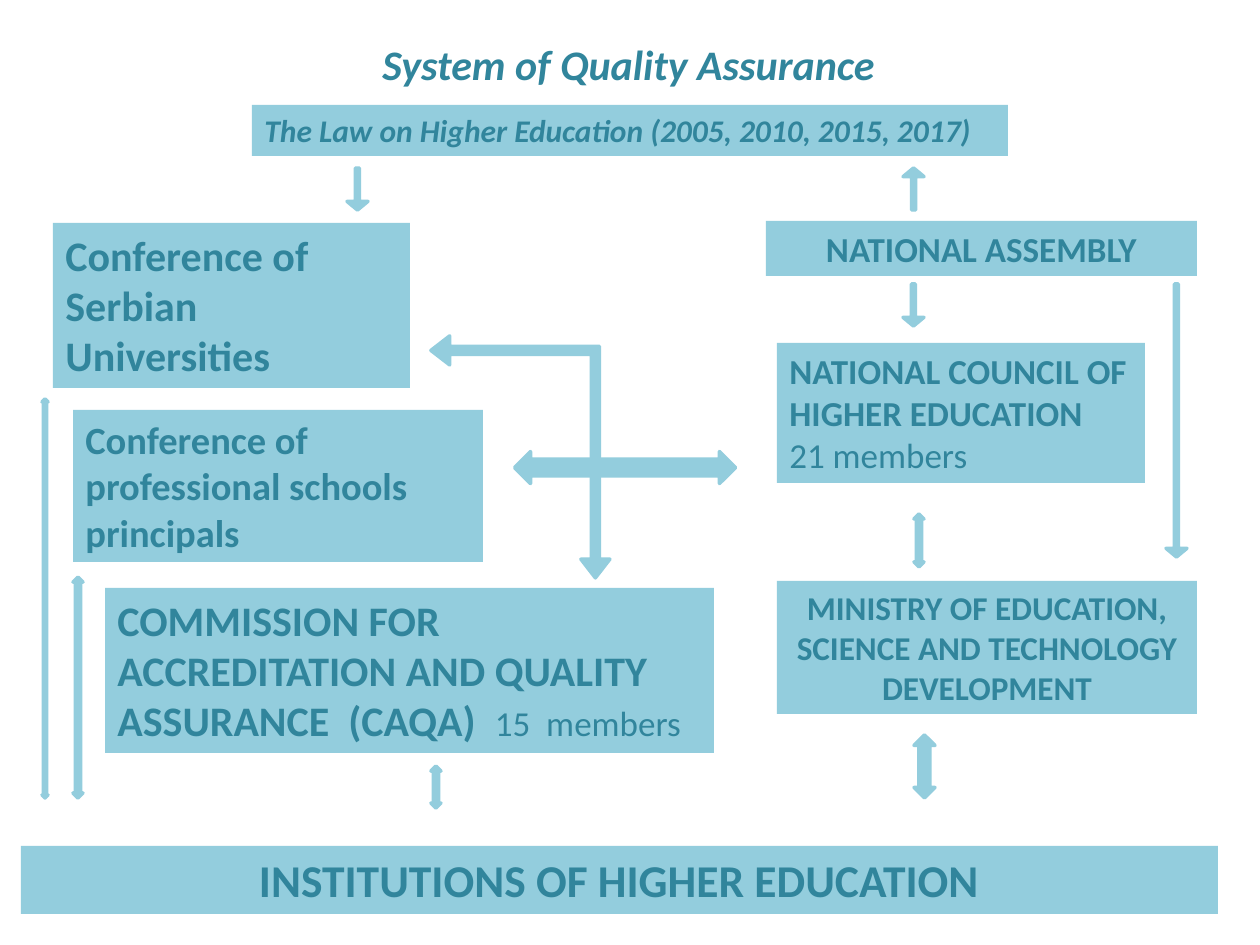
import dataclasses
import typing

import pptx
import pptx.dml.color
import pptx.enum.shapes
import pptx.enum.text
import pptx.util

SCALE = 914400 / 126
FILL = "93CDDD"
INK = "31859C"
KIND = pptx.enum.shapes.MSO_SHAPE
ALIGN = pptx.enum.text.PP_ALIGN
DOWN = (0.187, 0.412)
BOTH = (0.275, 0.525)
BENT = (0.045, 0.081, 0.105)


class Run(typing.NamedTuple):
    text: str
    size: int
    bold: bool = True
    slant: bool = False


@dataclasses.dataclass
class Box:
    left: int
    top: int
    width: int
    height: int
    paras: list[list[Run]]
    center: bool = False


@dataclasses.dataclass
class Arrow:
    left: int
    top: int
    width: int
    height: int
    kind: typing.Any
    shape: tuple[float, ...]
    turn: int = 0
    flip: bool = False


def px(count: int) -> int:
    return round(count * SCALE)


def place(item: Box | Arrow) -> tuple[int, ...]:
    return tuple(px(n) for n in (item.left, item.top, item.width, item.height))


def color(code: str) -> pptx.dml.color.RGBColor:
    return pptx.dml.color.RGBColor.from_string(code)


def paint(shape: typing.Any) -> None:
    shape.shadow.inherit = False
    shape.fill.solid()
    shape.fill.fore_color.rgb = color(FILL)


def write(frame: typing.Any, paras: list[list[Run]], center: bool) -> None:
    frame.vertical_anchor = pptx.enum.text.MSO_ANCHOR.TOP
    frame.auto_size = pptx.enum.text.MSO_AUTO_SIZE.SHAPE_TO_FIT_TEXT
    for index, runs in enumerate(paras):
        para = frame.add_paragraph() if index else frame.paragraphs[0]
        para.alignment = ALIGN.CENTER if center else ALIGN.LEFT
        for part in runs:
            run = para.add_run()
            run.text = part.text
            font = run.font
            font.name = "Calibri"
            font.size = pptx.util.Pt(part.size)
            font.bold = part.bold
            font.italic = part.slant
            font.color.rgb = color(INK)


def draw_box(slide: typing.Any, box: Box) -> None:
    shape = slide.shapes.add_shape(KIND.RECTANGLE, *place(box))
    paint(shape)
    shape.line.fill.background()
    shape.text_frame.word_wrap = True
    write(shape.text_frame, box.paras, box.center)


def draw_title(slide: typing.Any, box: Box) -> None:
    frame = slide.shapes.add_textbox(*place(box)).text_frame
    frame.word_wrap = False
    write(frame, box.paras, box.center)


def draw_arrow(slide: typing.Any, arrow: Arrow) -> None:
    shape = slide.shapes.add_shape(arrow.kind, *place(arrow))
    paint(shape)
    shape.line.color.rgb = color(FILL)
    shape.line.width = pptx.util.Pt(2)
    for index, value in enumerate(arrow.shape):
        shape.adjustments[index] = value
    shape.rotation = arrow.turn
    if arrow.flip:
        shape.element.spPr.xfrm.set("flipV", "1")


TITLE = Box(370, 32, 522, 63, [[Run("System of Quality Assurance", 24, slant=True)]])

BOXES = [
    Box(252, 105, 756, 51,
        [[Run("The Law on Higher Education (2005, 2010, 2015, 2017)", 18, slant=True)]]),
    Box(766, 221, 431, 55, [[Run("NATIONAL ASSEMBLY", 20)]], True),
    Box(777, 343, 368, 140,
        [[Run("NATIONAL COUNCIL OF HIGHER EDUCATION", 20)],
         [Run("21 members", 20, False)]]),
    Box(777, 581, 420, 133,
        [[Run("MINISTRY OF EDUCATION, SCIENCE AND TECHNOLOGY DEVELOPMENT", 19)]], True),
    Box(53, 223, 357, 165, [[Run("Conference of Serbian Universities", 24)]]),
    Box(21, 846, 1197, 68, [[Run("INSTITUTIONS OF HIGHER EDUCATION", 26)]], True),
    Box(73, 410, 410, 152, [[Run("Conference of professional schools principals", 22)]]),
    Box(105, 588, 609, 165,
        [[Run("COMMISSION FOR ACCREDITATION AND QUALITY ASSURANCE  (CAQA)  ", 24),
          Run("15  members", 20, False)]]),
]

ARROWS = [
    Arrow(347, 168, 21, 42, KIND.DOWN_ARROW, DOWN),
    Arrow(903, 168, 21, 42, KIND.DOWN_ARROW, DOWN, 180),
    Arrow(903, 284, 21, 42, KIND.DOWN_ARROW, DOWN),
    Arrow(1166, 284, 21, 273, KIND.DOWN_ARROW, DOWN),
    Arrow(914, 514, 10, 53, KIND.UP_DOWN_ARROW, BOTH),
    Arrow(914, 735, 21, 63, KIND.UP_DOWN_ARROW, BOTH),
    Arrow(431, 766, 10, 42, KIND.UP_DOWN_ARROW, BOTH),
    Arrow(431, 336, 179, 242, KIND.LEFT_UP_ARROW, BENT, flip=True),
    Arrow(42, 399, 6, 399, KIND.UP_DOWN_ARROW, BOTH),
    Arrow(73, 577, 10, 221, KIND.UP_DOWN_ARROW, BOTH),
    Arrow(609, 357, 32, 221, KIND.UP_DOWN_ARROW, BOTH, 270),
]


def main() -> None:
    deck = pptx.Presentation()
    deck.slide_width = px(1260)
    deck.slide_height = px(945)
    slide = deck.slides.add_slide(deck.slide_layouts[6])
    for box in BOXES:
        draw_box(slide, box)
    draw_title(slide, TITLE)
    for arrow in ARROWS:
        draw_arrow(slide, arrow)
    deck.save("out.pptx")


if __name__ == "__main__":
    main()
